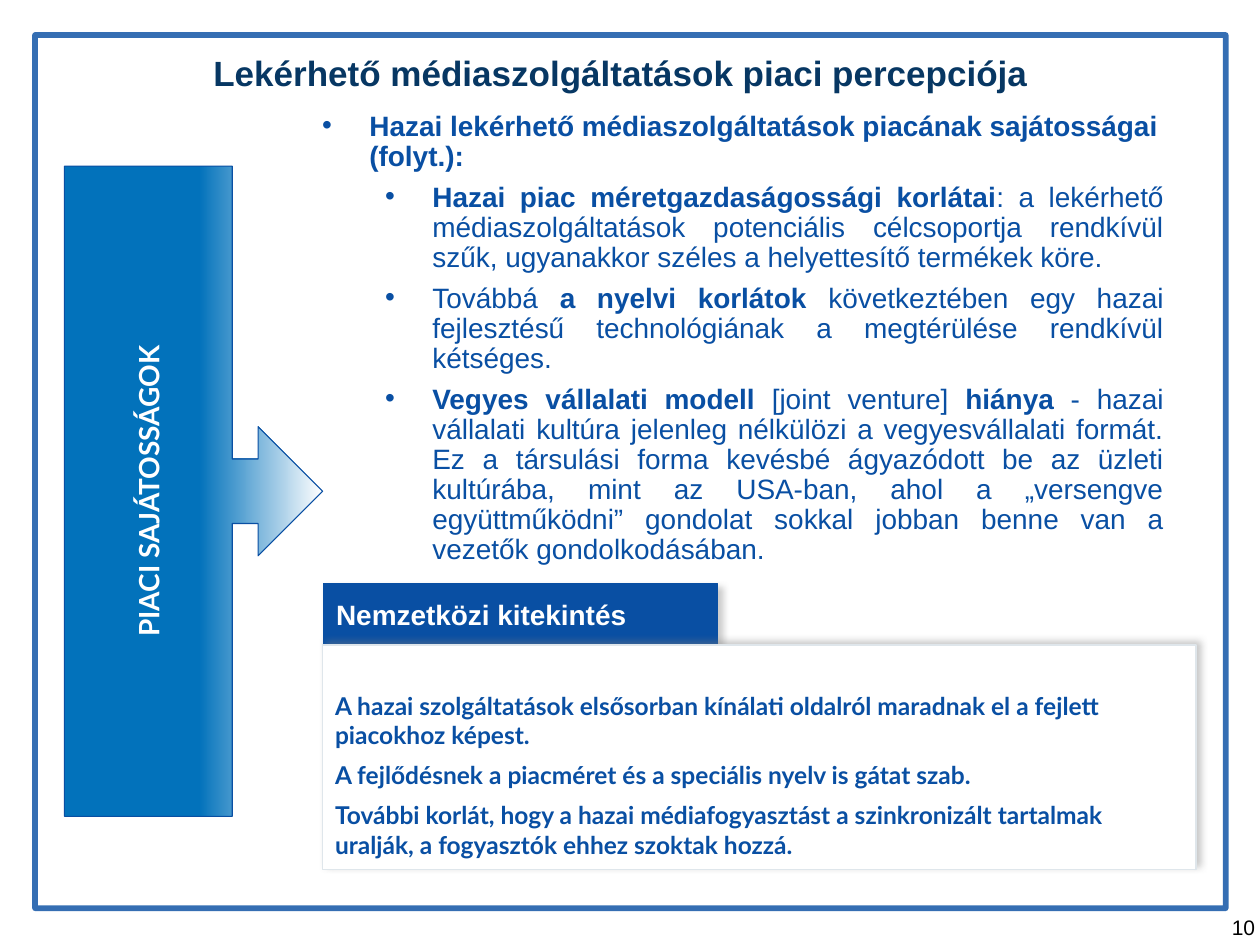
from dataclasses import dataclass

from lxml import etree
from pptx import Presentation
from pptx.dml.color import RGBColor
from pptx.enum import shapes, text
from pptx.oxml import ns
from pptx.util import Pt


@dataclass(frozen=True)
class Theme:
    blue: str = "094FA3"
    navy: str = "073763"
    arrow: str = "0272BB"
    white: str = "FFFFFF"
    black: str = "000000"
    edge: str = "DFE6EB"
    shadow: str = "808080"
    title: float = 20
    body: float = 16
    note: float = 14
    number: float = 12
    main_font: str = "Arial"
    alt_font: str = "Lato"


T = Theme()
ALIGN = text.PP_ALIGN

HEADING = "Hazai lekérhető médiaszolgáltatások piacának sajátosságai (folyt.):"

# Each bullet is a list of (text, bold) runs
BULLETS = [
    [("Hazai piac méretgazdaságossági korlátai", True),
     (": a lekérhető médiaszolgáltatások potenciális célcsoportja rendkívül "
      "szűk, ugyanakkor széles a helyettesítő termékek köre.", False)],
    [("Továbbá ", False), ("a nyelvi korlátok ", True),
     ("következtében egy hazai fejlesztésű technológiának a megtérülése "
      "rendkívül kétséges.", False)],
    [("Vegyes vállalati modell ", True), ("[joint venture] ", False),
     ("hiánya", True),
     (" - hazai vállalati kultúra jelenleg nélkülözi a vegyesvállalati "
      "formát. Ez a társulási forma kevésbé ágyazódott be az üzleti "
      "kultúrába, mint az USA-ban, ahol a „versengve együttműködni” gondolat "
      "sokkal jobban benne van a vezetők gondolkodásában.", False)],
]

NOTES = [
    "A hazai szolgáltatások elsősorban kínálati oldalról maradnak el a fejlett "
    "piacokhoz képest.",
    "A fejlődésnek a piacméret és a speciális nyelv is gátat szab.",
    "További korlát, hogy a hazai médiafogyasztást a szinkronizált tartalmak "
    "uralják, a fogyasztók ehhez szoktak hozzá.",
]


def rgb(value):
    return RGBColor.from_string(value)


def child(parent, tag, **attrs):
    el = etree.SubElement(parent, ns.qn(tag))
    for key, value in attrs.items():
        el.set(key, str(value))
    return el


def style(p, size, color, font=T.main_font, bold=None, align=ALIGN.LEFT):
    p.alignment = align
    f = p.font
    f.name, f.size, f.bold = font, Pt(size), bold
    f.color.rgb = rgb(color)


def frame(sp, anchor=text.MSO_ANCHOR.TOP, top=3.6, bottom=3.6):
    tf = sp.text_frame
    tf.word_wrap = True
    tf.vertical_anchor = anchor
    tf.margin_left = tf.margin_right = Pt(7.2)
    tf.margin_top, tf.margin_bottom = Pt(top), Pt(bottom)
    return tf


def paragraph(tf, index):
    """Return the first paragraph, or a new one set 6 pt below the last."""
    if index == 0:
        return tf.paragraphs[0]
    p = tf.add_paragraph()
    p.space_before = Pt(6)
    return p


def add_box(s, kind, box, line, width, fill=None):
    sp = s.shapes.add_shape(kind, *map(Pt, box))
    sp.shadow.inherit = False
    sp.line.color.rgb = rgb(line)
    sp.line.width = Pt(width)
    if fill:
        sp.fill.solid()
        sp.fill.fore_color.rgb = rgb(fill)
    else:
        sp.fill.background()
    return sp


def add_shadow(sp, alpha, angle):
    effects = sp._element.spPr.find(ns.qn("a:effectLst"))
    shadow = child(effects, "a:outerShdw", blurRad=Pt(4), dist=Pt(3),
                   dir=angle * 60000, algn="ctr", rotWithShape=0)
    color = child(shadow, "a:srgbClr", val=T.shadow)
    child(color, "a:alpha", val=alpha * 1000)


def add_border(s):
    sp = add_box(s, shapes.MSO_SHAPE.RECTANGLE, (20, 20, 680.4, 499),
                 T.blue, 3.25)
    color = sp.line._ln.find(".//" + ns.qn("a:srgbClr"))
    child(color, "a:alpha", val=81000)


def add_number(s, number):
    sp = s.shapes.add_textbox(Pt(676.8), Pt(519), Pt(47.5), Pt(19.5))
    p = frame(sp).paragraphs[0]
    p.text = number
    style(p, T.number, T.black, align=ALIGN.RIGHT)


def set_title(s, title):
    sp = s.shapes.title
    sp.left, sp.top, sp.width, sp.height = map(Pt, (54.7, 17.3, 600, 48.2))
    p = frame(sp, text.MSO_ANCHOR.MIDDLE).paragraphs[0]
    p.text = title
    style(p, T.title, T.navy, bold=True, align=ALIGN.CENTER)


def add_bullets(s):
    sp = s.shapes.add_textbox(Pt(177), Pt(60.5), Pt(495), Pt(265.7))
    tf = frame(sp)
    for i, runs in enumerate([[(HEADING, True)]] + BULLETS):
        p = paragraph(tf, i)
        p.level = min(i, 1)
        p.line_spacing = Pt(17.2)
        pPr = p._p.get_or_add_pPr()
        pPr.set("marL", str(Pt(27 + 36 * p.level)))
        pPr.set("indent", str(Pt(-27)))
        child(pPr, "a:buFont", typeface=T.main_font)
        child(pPr, "a:buChar", char="•")
        style(p, T.body, T.blue, align=ALIGN.JUSTIFY if i else ALIGN.LEFT)
        for words, bold in runs:
            r = p.add_run()
            r.text, r.font.bold = words, bold


def add_arrow(s, label):
    sp = add_box(s, shapes.MSO_SHAPE.RIGHT_ARROW_CALLOUT,
                 (36.8, 95, 147.6, 371.5), T.blue, 0.63)
    sp.fill.gradient()
    sp.fill.gradient_angle = 0
    stops = ((0.52, T.arrow), (1, T.white))
    for stop, (position, color) in zip(sp.fill.gradient_stops, stops):
        stop.position = position
        stop.color.rgb = rgb(color)
    tf = frame(sp, text.MSO_ANCHOR.MIDDLE)
    tf._txBody.bodyPr.set("vert", "vert270")
    p = tf.paragraphs[0]
    p.text = label
    style(p, T.body, T.white, T.alt_font, True, ALIGN.CENTER)


def add_outlook(s, heading):
    rect = shapes.MSO_SHAPE.RECTANGLE
    # Heading tab
    tab = add_box(s, rect, (185, 333.5, 225.2, 34.6), T.blue, 0.75, T.blue)
    add_shadow(tab, 40, 45)
    p = frame(tab, text.MSO_ANCHOR.MIDDLE, 5.8, 5.8).paragraphs[0]
    p.text = heading
    style(p, T.body, T.white, bold=True)

    # Panel with the notes
    panel = add_box(s, rect, (184.4, 368.5, 499, 128.2), T.edge, 0.75, T.white)
    add_shadow(panel, 43, 315)
    tf = frame(panel, top=26.4)
    for i, note in enumerate(NOTES):
        p = paragraph(tf, i)
        p.text = note
        style(p, T.note, T.blue, T.alt_font, True)


def main():
    prs = Presentation()
    prs.slide_width, prs.slide_height = Pt(720), Pt(540)
    s = prs.slides.add_slide(prs.slide_layouts[5])
    add_border(s)
    add_number(s, "10")
    set_title(s, "Lekérhető médiaszolgáltatások piaci percepciója")
    add_bullets(s)
    add_arrow(s, "PIACI SAJÁTOSSÁGOK")
    add_outlook(s, "Nemzetközi kitekintés")
    prs.save("out.pptx")


if __name__ == "__main__":
    main()
